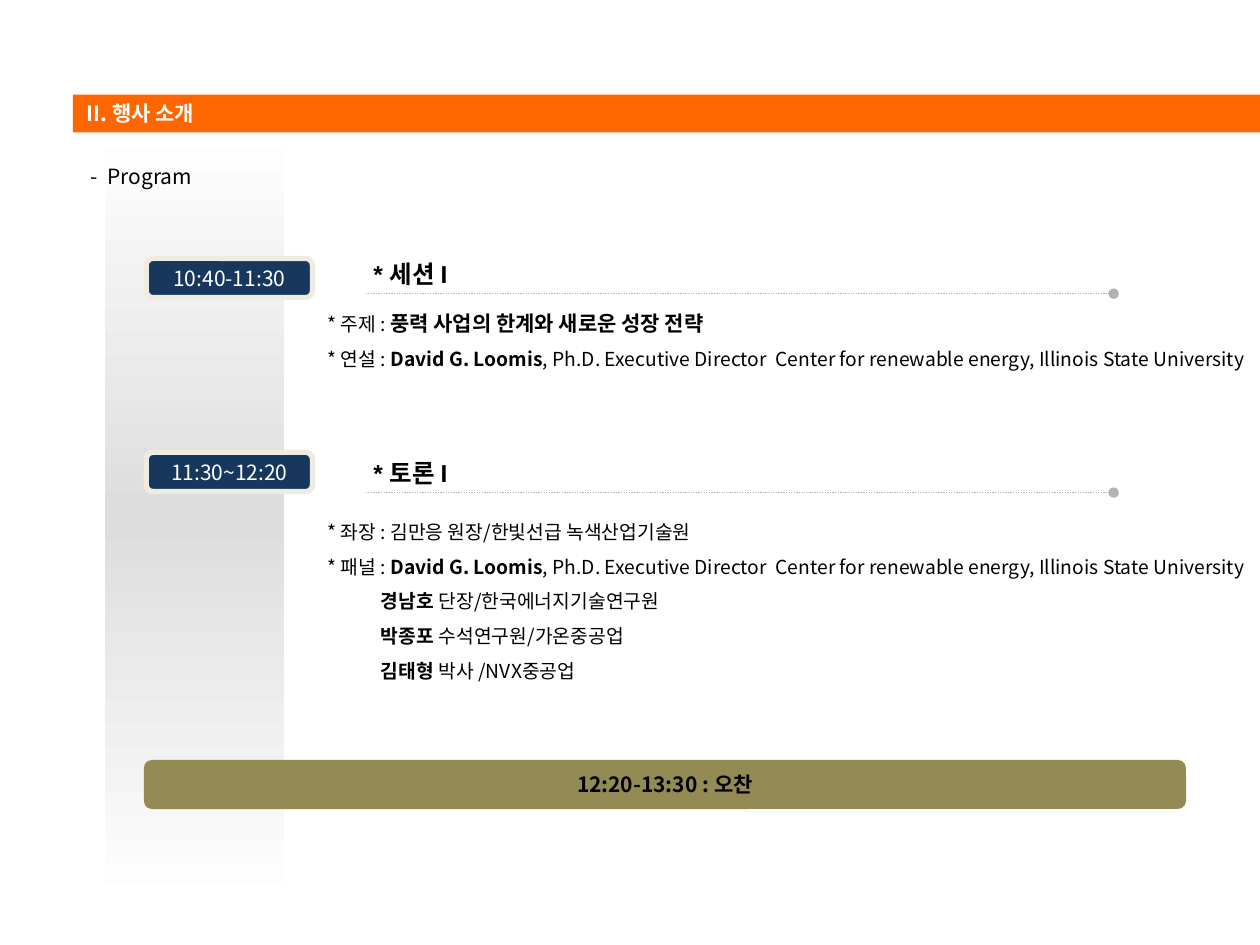
from copy import deepcopy

from pptx import Presentation
from pptx.dml.color import RGBColor
from pptx.enum.dml import MSO_LINE
from pptx.enum.shapes import MSO_CONNECTOR, MSO_SHAPE
from pptx.enum.text import MSO_ANCHOR, MSO_AUTO_SIZE, PP_ALIGN
from pptx.oxml.ns import qn
from pptx.util import Cm, Pt
from lxml.etree import SubElement

COLORS = {
    "white": "FFFFFF", "black": "000000", "band": "DDDDDD", "title": "FF6600",
    "time": "17375E", "time_edge": "EEECE1", "lunch": "948A54", "rule": "B2B2B2",
}
FONT = "Noto Sans CJK KR"


def rgb(name):
    return RGBColor.from_string(COLORS[name])


def write(frame, lines, size=12, color="black", bold=False, font=FONT,
          align=PP_ALIGN.LEFT, spacing=None, anchor=MSO_ANCHOR.TOP, wrap=True):
    """Fill a frame; a line is (indent in cm, runs), a run is (text, overrides)."""
    frame.word_wrap = wrap
    frame.vertical_anchor = anchor
    for index, (indent, runs) in enumerate(lines):
        paragraph = frame.paragraphs[0] if index == 0 else frame.add_paragraph()
        paragraph.alignment = align
        if spacing:
            paragraph.line_spacing = spacing
        if indent:
            paragraph._p.get_or_add_pPr().set("marL", str(Cm(indent)))
        for text, overrides in runs:
            run = paragraph.add_run()
            run.text = text
            run.font.size = Pt(overrides.get("size", size))
            run.font.bold = overrides.get("bold", bold)
            run.font.color.rgb = rgb(color)
            run.font.name = font
            SubElement(run._r.get_or_add_rPr(), qn("a:ea"), typeface=FONT)


def line(*runs, indent=0):
    return indent, [run if isinstance(run, tuple) else (run, {}) for run in runs]


def strong(text, **overrides):
    return text, {"bold": True, **overrides}


class ProgramSlide:
    def __init__(self, slide):
        self.shapes = slide.shapes

    def box(self, left, top, width, height, fill=None, edge=None,
            kind=MSO_SHAPE.ROUNDED_RECTANGLE, lines=(), **style):
        shape = self.shapes.add_shape(kind, Cm(left), Cm(top), Cm(width), Cm(height))
        shape.shadow.inherit = False
        if fill:
            shape.fill.solid()
            shape.fill.fore_color.rgb = rgb(fill)
        else:
            shape.fill.background()
        if edge:
            shape.line.color.rgb = rgb(edge)
            shape.line.width = Pt(3)
        else:
            shape.line.fill.background()
        if lines:
            write(shape.text_frame, lines, anchor=MSO_ANCHOR.MIDDLE, **style)
        return shape

    def fading_band(self, left, top, width, height):
        """Vertical gradient: white, grey in the middle, white again."""
        band = self.box(left, top, width, height, kind=MSO_SHAPE.RECTANGLE)
        band.fill.gradient()
        band.fill.gradient_angle = 270
        first, last = band.fill.gradient_stops
        first.color.rgb = last.color.rgb = rgb("white")
        first.position, last.position = 0, 1
        middle = deepcopy(first._gs)
        first._gs.addnext(middle)
        grey = band.fill.gradient_stops[1]
        grey.color.rgb = rgb("band")
        grey.position = 0.5

    def text(self, left, top, width, height, lines, **style):
        box = self.shapes.add_textbox(Cm(left), Cm(top), Cm(width), Cm(height))
        write(box.text_frame, lines, **style)
        box.text_frame.auto_size = MSO_AUTO_SIZE.SHAPE_TO_FIT_TEXT

    def dotted_rule(self, left, right, y):
        rule = self.shapes.add_connector(
            MSO_CONNECTOR.STRAIGHT, Cm(left), Cm(y), Cm(right), Cm(y))
        rule.line.color.rgb = rgb("rule")
        rule.line.width = Pt(0.75)
        rule.line.dash_style = MSO_LINE.ROUND_DOT
        SubElement(rule.line._get_or_add_ln(), qn("a:tailEnd"), type="oval")
        SubElement(rule._element.spPr, qn("a:effectLst"))

    def session(self, time, title, time_top, rule_y, details_top, details_height, details):
        self.box(2.95, time_top, 3.35, 0.79, "time", "time_edge", lines=[line(time)],
                 color="white", align=PP_ALIGN.CENTER, wrap=False)
        self.box(6.96, rule_y - 0.8, 15.75, 0.79, lines=[line(title, indent=0.28)],
                 size=14, bold=True, font="Arial")
        self.dotted_rule(7.37, 22.45, rule_y)
        self.text(6.35, details_top, 19.05, details_height, details, size=11, spacing=1.5)


def main():
    presentation = Presentation()
    presentation.slide_width, presentation.slide_height = Cm(25.4), Cm(19.05)
    page = ProgramSlide(presentation.slides.add_slide(presentation.slide_layouts[6]))

    page.fading_band(2.11, 2.51, 3.61, 15.8)
    page.box(1.47, 1.91, 23.93, 0.76, "title", kind=MSO_SHAPE.RECTANGLE)
    page.text(1.5, 1.91, 2.87, 0.74, [line("II. 행사 소개")],
              color="white", bold=True, wrap=False)
    page.text(1.5, 3.18, 13.87, 0.74, [line("-  Program", indent=0.08)])

    speaker = (strong("David G. Loomis"), ", Ph.D. Executive Director  Center for "
               "renewable energy, Illinois State University")
    page.session("10:40-11:30", "* 세션 I", 5.21, 5.92, 5.89, 1.73, [
        line("* 주제 : ", strong("풍력 사업의 한계와 새로운 성장 전략", size=12)),
        line("* 연설 : ", *speaker),
    ])
    panelists = [("경남호", " 단장/한국에너지기술연구원"),
                 ("박종포", " 수석연구원/가온중공업"),
                 ("김태형", " 박사 /NVX중공업")]
    page.session("11:30~12:20", "* 토론 I", 9.12, 9.93, 10.13, 4.47, [
        line("* 좌장 : 김만응 원장/한빛선급 녹색산업기술원"),
        line("* 패널 : ", *speaker),
        *(line(strong(name), role, indent=1.08) for name, role in panelists),
    ])

    page.box(2.9, 15.32, 21.01, 0.99, "lunch", lines=[line("12:20-13:30 : 오찬")],
             bold=True, align=PP_ALIGN.CENTER, wrap=False)
    presentation.save("out.pptx")


if __name__ == "__main__":
    main()
